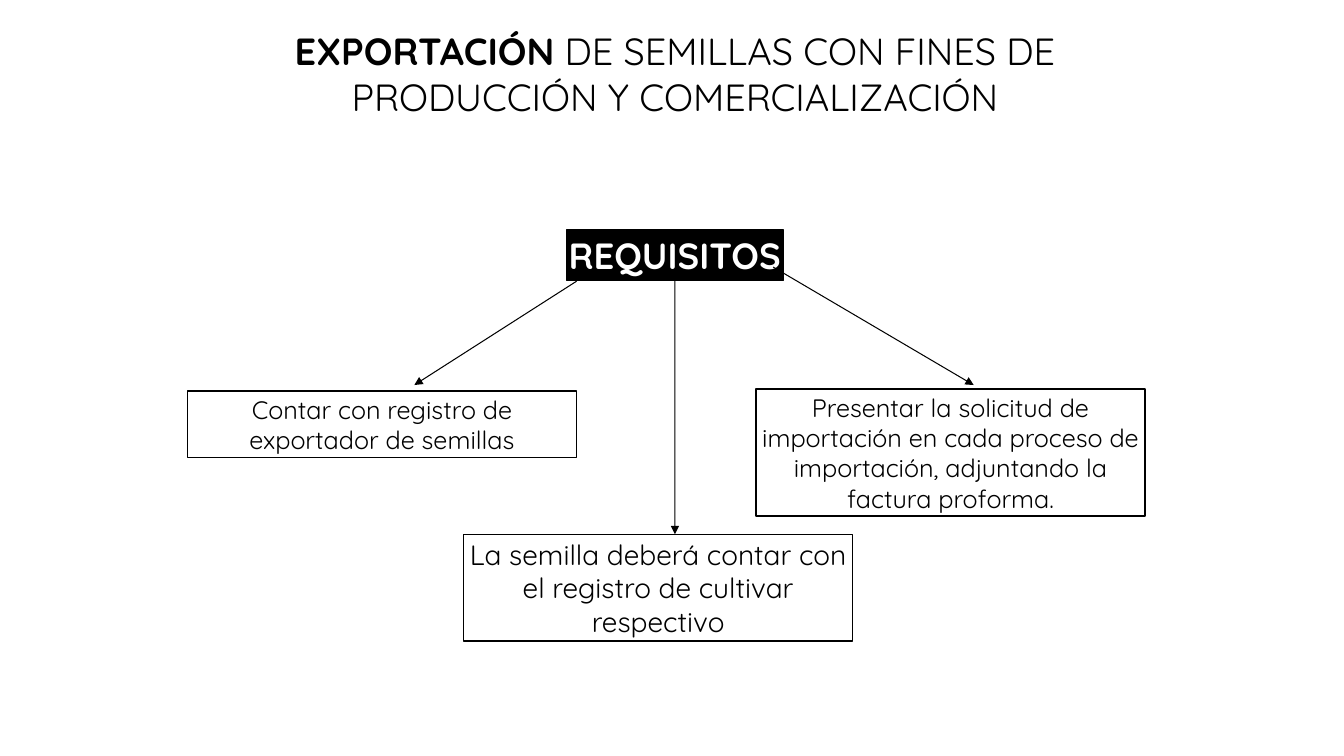
import pptx
import pptx.util
import pptx.dml.color
import pptx.enum.shapes
import pptx.enum.text
import pptx.oxml.ns
import lxml.etree

BLACK = pptx.dml.color.RGBColor(0, 0, 0)
WHITE = pptx.dml.color.RGBColor(255, 255, 255)

prs = pptx.Presentation()
prs.slide_width = pptx.util.Inches(13.33)
prs.slide_height = pptx.util.Inches(7.5)
s = prs.slides.add_slide(prs.slide_layouts[6])


def place(x, y):
    """Turn percentages of the slide's width and height into lengths."""
    return int(prs.slide_width * x / 100), int(prs.slide_height * y / 100)


def write(sp, runs, size, color, wrap=True):
    """Fill a shape with one centred paragraph of (text, bold) runs."""
    tf = sp.text_frame
    tf.word_wrap = wrap
    tf.vertical_anchor = pptx.enum.text.MSO_ANCHOR.MIDDLE
    tf.margin_left = tf.margin_right = pptx.util.Inches(0.05)
    tf.margin_top = tf.margin_bottom = pptx.util.Inches(0.02)
    p = tf.paragraphs[0]
    p.alignment = pptx.enum.text.PP_ALIGN.CENTER
    for text, bold in runs:
        r = p.add_run()
        r.text = text
        r.font.name = "Quicksand"
        r.font.size = pptx.util.Pt(size)
        r.font.bold = bold
        r.font.color.rgb = color


# Title
title = s.shapes.add_textbox(*place(15.75, 3.33), *place(68.93, 12.8))
write(title, [("EXPORTACIÓN", True),
              (" DE SEMILLAS CON FINES DE PRODUCCIÓN Y COMERCIALIZACIÓN", False)],
      27, BLACK)

# Heading and requirement boxes: left, top, width, height, text, size, fill, colour
BOX_W = 28.95
boxes = [
    (42.15, 30.4, 16.13, 6.67, "REQUISITOS", 26, BLACK, WHITE),
    (13.95, 51.73, BOX_W, 8.8,
     "Contar con registro de exportador de semillas", 18, WHITE, BLACK),
    (56.25, 51.47, BOX_W, 16.8,
     "Presentar la solicitud de importación en cada proceso de importación, "
     "adjuntando la factura proforma.", 18, WHITE, BLACK),
    (34.5, 70.67, BOX_W, 14.13,
     "La semilla deberá contar con el registro de cultivar respectivo",
     20, WHITE, BLACK),
]
shapes = []
for x, y, w, h, text, size, fill, color in boxes:
    sp = s.shapes.add_shape(pptx.enum.shapes.MSO_SHAPE.RECTANGLE,
                            *place(x, y), *place(w, h))
    sp.shadow.inherit = False
    sp.fill.solid()
    sp.fill.fore_color.rgb = fill
    sp.line.color.rgb = BLACK
    sp.line.width = pptx.util.Pt(1)
    heading = fill == BLACK
    write(sp, [(text, heading)], size, color, wrap=not heading)
    shapes.append(sp)

# Arrows from the heading; the middle one leaves from its bottom centre
arrows = [
    ((42.9, 37.2), (30.83, 50.93), False),
    ((57.53, 35.33), (72.45, 50.93), False),
    ((50.22, 37.07), (50.22, 70.67), True),
]
for start, end, joined in arrows:
    arrow = s.shapes.add_connector(pptx.enum.shapes.MSO_CONNECTOR.STRAIGHT,
                                   *place(*start), *place(*end))
    if joined:
        arrow.begin_connect(shapes[0], 2)
    arrow.line.color.rgb = BLACK
    arrow.line.width = pptx.util.Pt(0.75)
    lxml.etree.SubElement(arrow.line._get_or_add_ln(),
                          pptx.oxml.ns.qn("a:tailEnd"), type="triangle")
    lxml.etree.SubElement(arrow._element.spPr, pptx.oxml.ns.qn("a:effectLst"))

prs.save("out.pptx")
